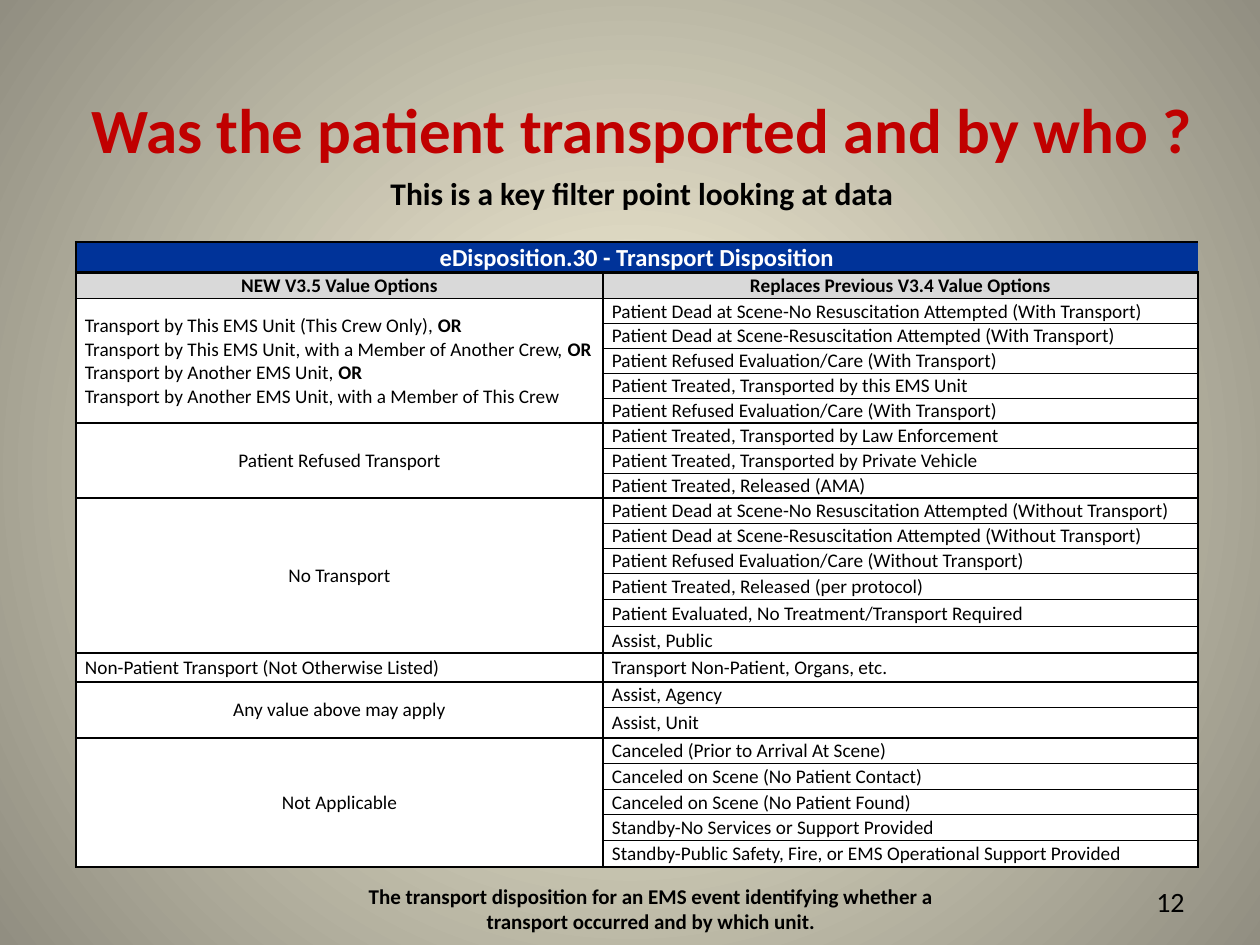
from dataclasses import dataclass

from lxml.etree import SubElement
from pptx import Presentation
from pptx.dml.color import RGBColor
from pptx.enum.text import MSO_ANCHOR as Anchor, MSO_AUTO_SIZE as AutoSize, PP_ALIGN as Align
from pptx.oxml import parse_xml
from pptx.oxml.ns import nsdecls, qn
from pptx.util import Emu, Pt

EMU_PER_PX = 914400 / 126
FONT = "Calibri"
BLACK, WHITE, RED, NAVY, GREY = "000000", "FFFFFF", "C00000", "003399", "D9D9D9"
THICK, THIN = 1.5, 0.5
PLAIN_TABLE_STYLE = "{2D5ABB26-0587-4C30-8999-92F81FD0307C}"


@dataclass
class Group:
    """New value lines as (text, bold ending), and the (old value, row height) pairs they replace."""
    new_lines: list[tuple[str, str]]
    old_values: list[tuple[str, int]]
    align: Align = Align.CENTER


GROUPS = [
    Group([("Transport by This EMS Unit (This Crew Only), ", "OR"),
           ("Transport by This EMS Unit, with a Member of Another Crew, ", "OR"),
           ("Transport by Another EMS Unit, ", "OR"),
           ("Transport by Another EMS Unit, with a Member of This Crew", "")],
          [("Patient Dead at Scene-No Resuscitation Attempted (With Transport)", 25),
           ("Patient Dead at Scene-Resuscitation Attempted (With Transport)", 25),
           ("Patient Refused Evaluation/Care (With Transport)", 25),
           ("Patient Treated, Transported by this EMS Unit", 25),
           ("Patient Refused Evaluation/Care (With Transport)", 25)], Align.LEFT),
    Group([("Patient Refused Transport", "")],
          [("Patient Treated, Transported by Law Enforcement", 25),
           ("Patient Treated, Transported by Private Vehicle", 25),
           ("Patient Treated, Released (AMA)", 25)]),
    Group([("No Transport", "")],
          [("Patient Dead at Scene-No Resuscitation Attempted (Without Transport)", 25),
           ("Patient Dead at Scene-Resuscitation Attempted (Without Transport)", 25),
           ("Patient Refused Evaluation/Care (Without Transport)", 25),
           ("Patient Treated, Released (per protocol)", 27),
           ("Patient Evaluated, No Treatment/Transport Required", 27),
           ("Assist, Public", 26)]),
    Group([("Non-Patient Transport (Not Otherwise Listed)", "")],
          [("Transport Non-Patient, Organs, etc.", 29)], Align.LEFT),
    Group([("Any value above may apply", "")],
          [("Assist, Agency", 26), ("Assist, Unit", 30)]),
    Group([("Not Applicable", "")],
          [("Canceled (Prior to Arrival At Scene)", 26),
           ("Canceled on Scene (No Patient Contact)", 26),
           ("Canceled on Scene (No Patient Found)", 25),
           ("Standby-No Services or Support Provided", 26),
           ("Standby-Public Safety, Fire, or EMS Operational Support Provided", 26)]),
]


def px(length: int) -> Emu:
    return Emu(round(length * EMU_PER_PX))


def rgb(color: str) -> RGBColor:
    return RGBColor.from_string(color)


def style_run(run, size: int, color: str = BLACK, bold: bool = False) -> None:
    run.font.name, run.font.size, run.font.bold = FONT, Pt(size), bold
    run.font.color.rgb = rgb(color)


def style_paragraph(paragraph, align: Align, size: int, color: str = BLACK,
                    bold: bool = False) -> None:
    paragraph.alignment = align
    for run in paragraph.runs:
        style_run(run, size, color, bold)


def paint_background(slide) -> None:
    """Radial gradient, light in the centre."""
    fill = slide.background.fill
    fill.gradient()
    for stop, position, color in zip(fill.gradient_stops, (0, 1), ("FCF7DD", "918E81")):
        stop.position = position
        stop.color.rgb = rgb(color)
    linear = next(slide.element.iter(qn("a:lin")))
    linear.getparent().replace(linear, parse_xml(
        f'<a:path {nsdecls("a")} path="circle">'
        '<a:fillToRect l="50000" t="50000" r="50000" b="50000"/></a:path>'))


def set_borders(cell, **widths: float) -> None:
    """Black borders, in points, keyed by side: L, R, T, B in that order."""
    properties = cell._tc.get_or_add_tcPr()
    for index, (side, width) in enumerate(widths.items()):
        line = SubElement(properties, qn(f"a:ln{side}"), w=str(Pt(width)))
        color_fill = SubElement(line, qn("a:solidFill"))
        SubElement(color_fill, qn("a:srgbClr"), val=BLACK)
        properties.insert(index, line)


def style_cell(cell, fill: str, align: Align, anchor: Anchor = Anchor.MIDDLE) -> None:
    cell.fill.solid()
    cell.fill.fore_color.rgb = rgb(fill)
    cell.vertical_anchor = anchor
    cell.margin_left = px(9 if align == Align.LEFT else 1)
    cell.margin_top = cell.margin_right = px(1)
    cell.margin_bottom = 0


def write_header(cell, text: str, fill: str, size: int, color: str, anchor: Anchor) -> None:
    style_cell(cell, fill, Align.CENTER, anchor)
    cell.text_frame.text = text
    style_paragraph(cell.text_frame.paragraphs[0], Align.CENTER, size, color, True)


def write_new_value(cell, group: Group) -> None:
    paragraph = cell.text_frame.paragraphs[0]
    paragraph.alignment = group.align
    for index, (text, ending) in enumerate(group.new_lines):
        if index:
            paragraph.add_line_break()
        for part, bold in ((text, False), (ending, True)):
            if part:
                run = paragraph.add_run()
                run.text = part
                style_run(run, 11, bold=bold)


def add_disposition_table(slide) -> None:
    heights = [30, 26] + [height for group in GROUPS for _, height in group.old_values]
    widths = (527, 595)
    table = slide.shapes.add_table(len(heights), 2, px(76), px(242),
                                   px(sum(widths)), px(sum(heights))).table
    table._tbl.tblPr.find(qn("a:tableStyleId")).text = PLAIN_TABLE_STYLE
    table.first_row = table.horz_banding = False
    for column, width in zip(table.columns, widths):
        column.width = px(width)
    for row, height in zip(table.rows, heights):
        row.height = px(height)

    heading = table.cell(0, 0)
    heading.merge(table.cell(0, 1))
    write_header(heading, "eDisposition.30 - Transport Disposition", NAVY, 14, WHITE,
                 Anchor.BOTTOM)
    set_borders(heading, L=THICK, T=THICK, B=THICK)
    set_borders(table.cell(0, 1), T=THICK, B=THICK)
    for column, text in enumerate(("NEW V3.5 Value Options",
                                   "Replaces Previous V3.4 Value Options")):
        cell = table.cell(1, column)
        write_header(cell, text, GREY, 11, BLACK, Anchor.MIDDLE)
        set_borders(cell, L=THICK, R=THICK, T=THICK, B=THIN)

    first = 2
    for group in GROUPS:
        last = first + len(group.old_values) - 1
        if last > first:
            table.cell(first, 0).merge(table.cell(last, 0))
        write_new_value(table.cell(first, 0), group)
        group_top = THIN if first == 2 else THICK
        for row, (old_value, _) in enumerate(group.old_values, first):
            new_cell, old_cell = table.cell(row, 0), table.cell(row, 1)
            style_cell(new_cell, WHITE, group.align)
            set_borders(new_cell, L=THICK, R=THICK, T=group_top, B=THICK)
            style_cell(old_cell, WHITE, Align.LEFT)
            old_cell.text_frame.text = old_value
            style_paragraph(old_cell.text_frame.paragraphs[0], Align.LEFT, 11)
            set_borders(old_cell, L=THICK, R=THICK, T=group_top if row == first else THIN,
                        B=THICK if row == last else THIN)
        first = last + 1


def add_title(slide) -> None:
    title = slide.shapes.title
    title.left, title.top, title.width, title.height = px(53), px(84), px(1178), px(136)
    frame = title.text_frame
    frame.text = "Was the patient transported and by who ?\nThis is a key filter point looking at data"
    frame.vertical_anchor, frame.auto_size = Anchor.TOP, AutoSize.SHAPE_TO_FIT_TEXT
    for paragraph, size, color in zip(frame.paragraphs, (36, 18), (RED, BLACK)):
        paragraph.space_after = Pt(4.5)
        style_paragraph(paragraph, Align.CENTER, size, color, True)


def add_label(slide, box: tuple[int, int, int, int], text: str, align: Align, size: int,
              bold: bool, anchor: Anchor) -> None:
    frame = slide.shapes.add_textbox(*map(px, box)).text_frame
    frame.text = text
    frame.word_wrap, frame.vertical_anchor = True, anchor
    frame.auto_size = AutoSize.SHAPE_TO_FIT_TEXT
    style_paragraph(frame.paragraphs[0], align, size, bold=bold)


def main() -> None:
    deck = Presentation()
    deck.slide_width, deck.slide_height = px(1260), px(945)
    slide = deck.slides.add_slide(deck.slide_layouts[5])
    paint_background(slide)
    add_label(slide, (903, 878, 294, 47), "12", Align.RIGHT, 16, False, Anchor.MIDDLE)
    add_title(slide)
    add_disposition_table(slide)
    add_label(slide, (336, 877, 630, 63),
              "The transport disposition for an EMS event identifying whether a "
              "transport occurred and by which unit.", Align.CENTER, 12, True, Anchor.TOP)
    deck.save("out.pptx")


if __name__ == "__main__":
    main()
